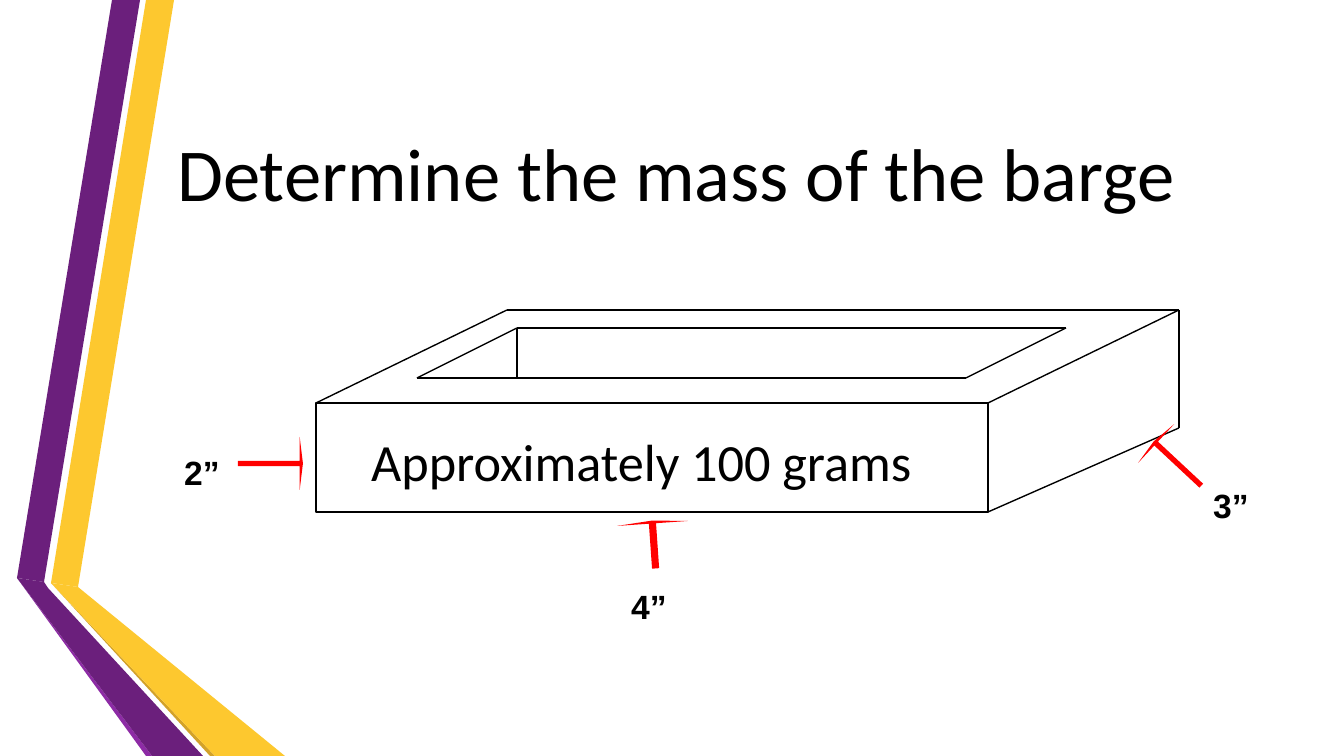
from dataclasses import dataclass

from lxml import etree
from pptx import Presentation
from pptx.dml.color import RGBColor
from pptx.enum.shapes import MSO_CONNECTOR, MSO_SHAPE
from pptx.enum.text import MSO_ANCHOR, PP_ALIGN
from pptx.oxml.ns import qn
from pptx.util import Pt

RECTANGLE, RIGHT_ARROW = MSO_SHAPE.RECTANGLE, MSO_SHAPE.RIGHT_ARROW
STRAIGHT = MSO_CONNECTOR.STRAIGHT
LEFT, TOP, MIDDLE = PP_ALIGN.LEFT, MSO_ANCHOR.TOP, MSO_ANCHOR.MIDDLE
EMU_PER_PX = 914400 / 134.4


@dataclass(frozen=True)
class Theme:
    ink: str = "000000"
    arrow: str = "FF0000"
    purple: str = "6B1F7C"
    light_purple: str = "8D2BA5"
    gold: str = "FDC82F"
    dark_gold: str = "D3A229"
    text_font: str = "Calibri"
    label_font: str = "Arial"
    title_size: int = 40
    mass_size: int = 28
    label_size: int = 18
    line_width: float = 0.75


THEME = Theme()
SLIDE_SIZE = (1344, 756)

TITLE = ("Determine the mass of the barge", (164, 75, 1105, 194))
MASS = ("Approximately 100 grams", (358, 423, 598, 77))

# Ribbon pieces from back to front: colour, corner points
RIBBONS = [
    (THEME.gold, [(51, 583), (78, 587), (174, 0), (146, 0)]),
    (THEME.purple, [(140, 0), (112, 0), (17, 578), (44, 582)]),
    (THEME.light_purple, [(17, 578), (146, 756), (152, 756)]),
    (THEME.dark_gold, [(51, 583), (210, 756), (215, 756)]),
    (THEME.gold, [(51, 583), (215, 756), (285, 756), (78, 587)]),
    (THEME.purple, [(203, 756), (48, 588), (44, 582), (17, 578), (152, 756)]),
]

# Barge: front face, offset to its back edges, and the hold opening
FRONT = (316, 403, 672, 109)
DEPTH = (191, -93)
BACK_BOTTOM = 428
HOLD_FRONT, HOLD_BACK, HOLD_WIDTH = (417, 378), (517, 328), 549

# Dimension: text, label box, arrow box, arrow rotation
DIMENSIONS = [
    ("2”", (171, 445, 78, 40), (238, 437, 65, 53), 0),
    ("4”", (618, 579, 78, 40), (630, 509, 48, 71), 266),
    ("3”", (1200, 478, 78, 40), (1145, 437, 65, 53), 223),
]


def px(*values):
    return [round(value * EMU_PER_PX) for value in values]


def color(code):
    return RGBColor.from_string(code)


def write(shape, text, font, size, bold=False, anchor=TOP):
    frame = shape.text_frame
    frame.word_wrap = True
    frame.vertical_anchor = anchor
    para = frame.paragraphs[0]
    para.alignment = LEFT
    span = para.add_run()
    span.text = text
    span.font.name, span.font.size, span.font.bold = font, Pt(size), bold
    span.font.color.rgb = color(THEME.ink)


def paint(shape, fill):
    shape.shadow.inherit = False
    shape.fill.solid()
    shape.fill.fore_color.rgb = color(fill)
    shape.line.fill.background()


def outline(shape):
    shape.line.color.rgb = color(THEME.ink)
    shape.line.width = Pt(THEME.line_width)


def add_ribbon(page, fill, points):
    builder = page.shapes.build_freeform(*points[0], scale=EMU_PER_PX)
    builder.add_line_segments(points[1:], close=True)
    paint(builder.convert_to_shape(), fill)


def add_edge(page, start, end):
    edge = page.shapes.add_connector(STRAIGHT, *px(*start, *end))
    outline(edge)
    properties = edge._element.find(qn("p:spPr"))
    etree.SubElement(properties, qn("a:effectLst"))


def add_barge(page):
    front = page.shapes.add_shape(RECTANGLE, *px(*FRONT))
    front.shadow.inherit = False
    front.fill.background()
    outline(front)

    left, top, width, height = FRONT
    right = left + width
    back_left, back_right = left + DEPTH[0], right + DEPTH[0]
    back_top = top + DEPTH[1]
    hold_front_right = (HOLD_FRONT[0] + HOLD_WIDTH, HOLD_FRONT[1])
    hold_back_right = (HOLD_BACK[0] + HOLD_WIDTH, HOLD_BACK[1])
    edges = [
        ((left, top), (back_left, back_top)),
        ((right, top), (back_right, back_top)),
        ((back_left, back_top), (back_right, back_top)),
        ((back_right, back_top), (back_right, BACK_BOTTOM)),
        ((right, top + height), (back_right, BACK_BOTTOM)),
        (HOLD_BACK, HOLD_FRONT),
        (HOLD_BACK, hold_back_right),
        (HOLD_FRONT, hold_front_right),
        (hold_back_right, hold_front_right),
        (HOLD_BACK, (HOLD_BACK[0], HOLD_FRONT[1])),
    ]
    for start, end in edges:
        add_edge(page, start, end)


def add_dimension(page, text, label_box, arrow_box, rotation):
    arrow = page.shapes.add_shape(RIGHT_ARROW, *px(*arrow_box))
    arrow.adjustments[0], arrow.adjustments[1] = 0.1, 0.06
    arrow.rotation = rotation
    paint(arrow, THEME.arrow)
    label = page.shapes.add_textbox(*px(*label_box))
    write(label, text, THEME.label_font, THEME.label_size, bold=True)


def main():
    deck = Presentation()
    deck.slide_width, deck.slide_height = px(*SLIDE_SIZE)
    page = deck.slides.add_slide(deck.slide_layouts[5])

    for fill, points in RIBBONS:
        add_ribbon(page, fill, points)

    text, box = TITLE
    title = page.shapes.title
    title.left, title.top, title.width, title.height = px(*box)
    write(title, text, THEME.text_font, THEME.title_size, anchor=MIDDLE)

    add_barge(page)
    for dimension in DIMENSIONS:
        add_dimension(page, *dimension)

    text, box = MASS
    mass = page.shapes.add_textbox(*px(*box))
    write(mass, text, THEME.text_font, THEME.mass_size)

    deck.save("out.pptx")


if __name__ == "__main__":
    main()
